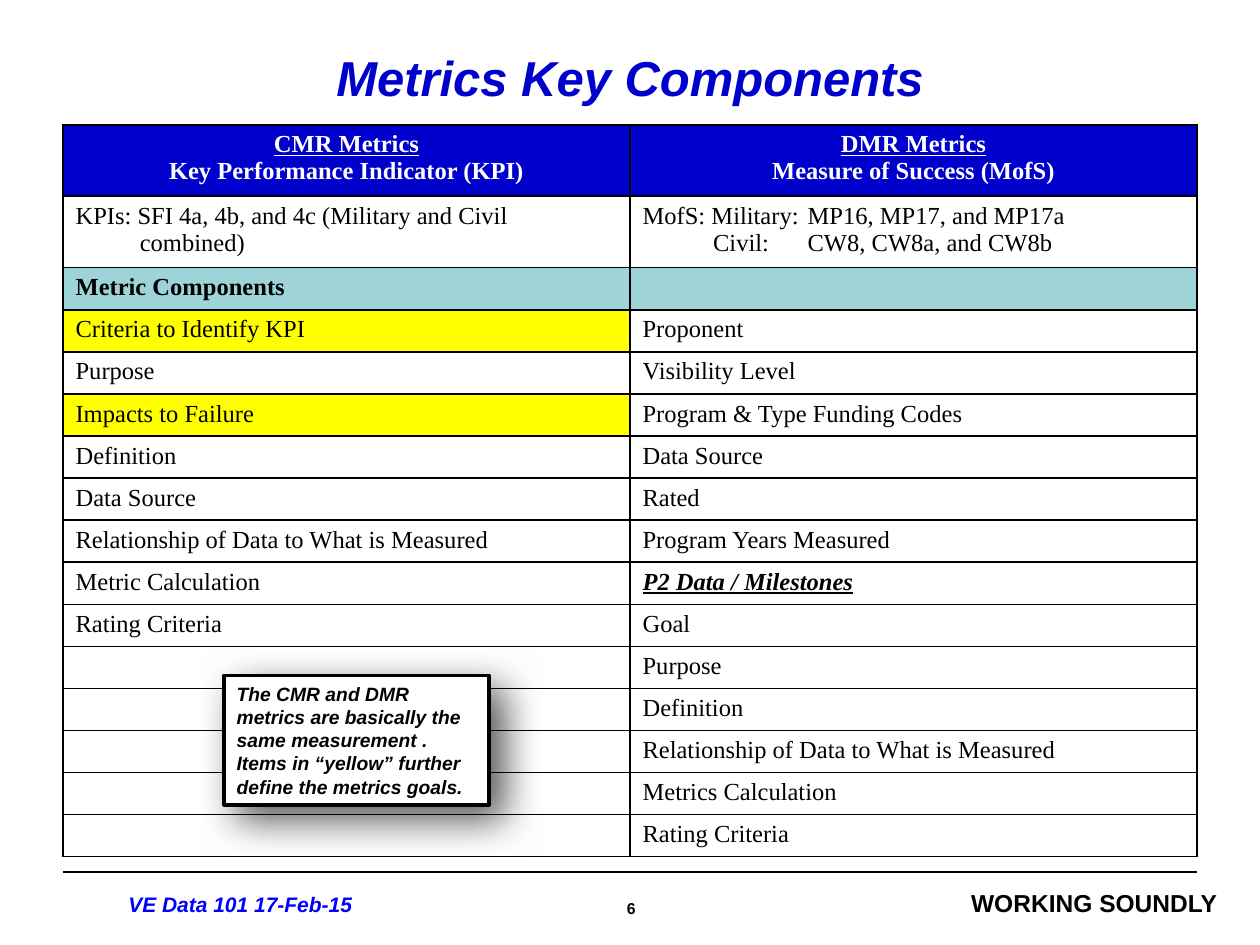
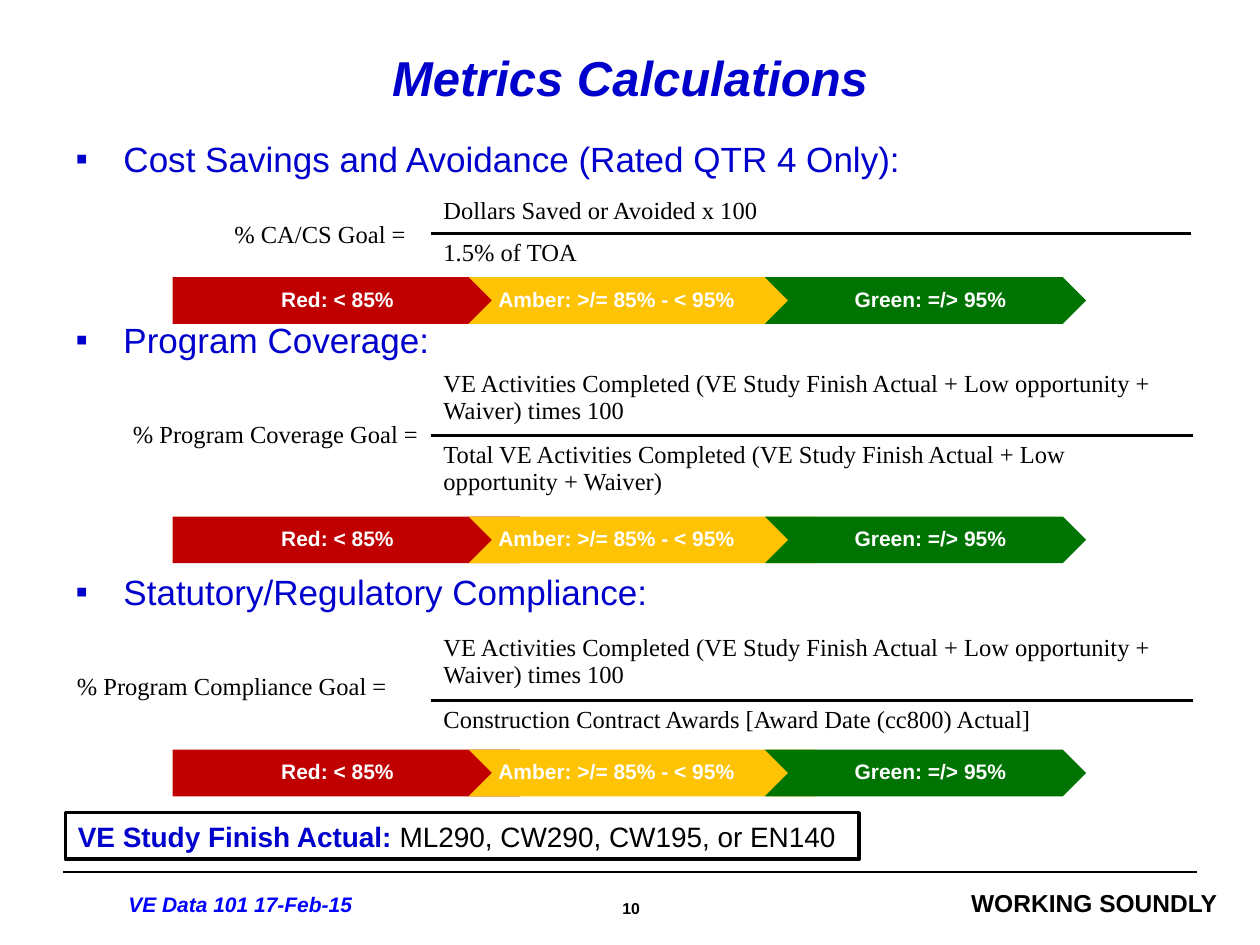
from dataclasses import dataclass

from lxml.etree import SubElement
from pptx import Presentation
from pptx.dml.color import RGBColor
from pptx.enum.shapes import MSO_CONNECTOR, MSO_SHAPE
from pptx.enum.text import MSO_ANCHOR, MSO_AUTO_SIZE, PP_ALIGN
from pptx.oxml.ns import qn
from pptx.util import Inches, Pt


@dataclass(frozen=True)
class Theme:
    black: RGBColor = RGBColor(0x00, 0x00, 0x00)
    white: RGBColor = RGBColor(0xFF, 0xFF, 0xFF)
    blue: RGBColor = RGBColor(0x00, 0x00, 0xCC)
    footer_blue: RGBColor = RGBColor(0x00, 0x00, 0xFF)
    teal: RGBColor = RGBColor(0x9E, 0xD3, 0xD7)
    yellow: RGBColor = RGBColor(0xFF, 0xFF, 0x00)
    red: RGBColor = RGBColor(0xC0, 0x00, 0x00)
    amber: RGBColor = RGBColor(0xFF, 0xC3, 0x05)
    green: RGBColor = RGBColor(0x00, 0x74, 0x03)
    sans: str = "Arial"
    serif: str = "Times New Roman"
    title_size: int = 28
    list_size: int = 20
    definition_size: int = 16
    table_size: int = 14
    motto_size: int = 14
    label_size: int = 12
    note_size: int = 11
    number_size: int = 9


NO_GRID_STYLE = "{2D5ABB26-0587-4C30-8999-92F81FD0307C}"
COMPONENT_ROW, NUMERATOR, DENOMINATOR = 0.31, 0.3, 0.36


class Deck:
    def __init__(self, theme):
        self.t = theme
        self.prs = Presentation()
        self.prs.slide_width, self.prs.slide_height = Inches(10), Inches(7.5)
        self.s = None

    def font(self, p, size, color, name=None, bold=False, italic=False, underline=False):
        for r in p.runs:
            f = r.font
            f.name, f.size, f.color.rgb = name or self.t.sans, Pt(size), color
            f.bold, f.italic, f.underline = bold, italic, underline

    def place(self, sp, x, y, w, h):
        sp.left, sp.top, sp.width, sp.height = Inches(x), Inches(y), Inches(w), Inches(h)

    def margins(self, tf, left, top, right, bottom):
        tf.margin_left, tf.margin_top = Inches(left), Inches(top)
        tf.margin_right, tf.margin_bottom = Inches(right), Inches(bottom)

    def indent(self, p, size):
        pPr = p._p.get_or_add_pPr()
        pPr.set("marL", str(Inches(size)))
        pPr.set("indent", str(-Inches(size)))
        return pPr

    def tabs(self, p, stops):
        tab_list = SubElement(p._p.get_or_add_pPr(), qn("a:tabLst"))
        for stop in stops:
            SubElement(tab_list, qn("a:tab"), pos=str(Inches(stop)), algn="l")

    def slide(self, title, number, layout):
        t = self.t
        self.s = self.prs.slides.add_slide(self.prs.slide_layouts[layout])
        sp = self.s.shapes.title
        self.place(sp, 0.5, 0.3, 9, 0.62)
        tf = sp.text_frame
        tf.text = title
        tf.auto_size, tf.vertical_anchor = MSO_AUTO_SIZE.NONE, MSO_ANCHOR.MIDDLE
        tf.paragraphs[0].alignment = PP_ALIGN.CENTER
        self.font(tf.paragraphs[0], t.title_size, t.blue, bold=True, italic=True)
        self.footer(number)

    def footer(self, number):
        t = self.t
        self.line(9.5, 6.92, 0.5, 6.92)
        self.text("WORKING SOUNDLY", 7.67, 7.05, 1.99, 0.24, t.motto_size,
                  t.black, PP_ALIGN.RIGHT, inset=False)
        self.text(str(number), 4.21, 7.08, 1.6, 0.25, t.number_size, t.black, PP_ALIGN.CENTER)
        self.text("VE Data 101 17-Feb-15", 0.92, 7.03, 2.2, 0.3, t.label_size,
                  t.footer_blue, italic=True)

    def line(self, x1, y1, x2, y2):
        c = self.s.shapes.add_connector(
            MSO_CONNECTOR.STRAIGHT, Inches(x1), Inches(y1), Inches(x2), Inches(y2))
        c.line.color.rgb, c.line.width = self.t.black, Pt(0.75)
        SubElement(c.element.spPr, qn("a:effectLst"))

    def text(self, text, x, y, w, h, size, color, align=PP_ALIGN.LEFT, italic=False, inset=True):
        sp = self.s.shapes.add_textbox(Inches(x), Inches(y), Inches(w), Inches(h))
        tf = sp.text_frame
        tf.text, tf.word_wrap = text, True
        if not inset:
            self.margins(tf, 0, 0, 0, 0)
        p = tf.paragraphs[0]
        p.alignment = align
        self.font(p, size, color, bold=True, italic=italic)

    def shape(self, kind, x, y, w, h, fill):
        sp = self.s.shapes.add_shape(kind, Inches(x), Inches(y), Inches(w), Inches(h))
        sp.shadow.inherit = False
        sp.fill.solid()
        sp.fill.fore_color.rgb = fill
        sp.line.fill.background()
        sp.text_frame.word_wrap = True
        return sp

    def box(self, text, x, y, w, h):
        sp = self.shape(MSO_SHAPE.RECTANGLE, x, y, w, h, self.t.white)
        sp.line.color.rgb, sp.line.width = self.t.black, Pt(2)
        sp.text_frame.text = text
        p = sp.text_frame.paragraphs[0]
        p.alignment = PP_ALIGN.LEFT
        return sp, p

    def note(self, text, x, y, w, h):
        sp, p = self.box(text, x, y, w, h)
        self.font(p, self.t.note_size, self.t.black, bold=True, italic=True)
        effects = sp.element.spPr.find(qn("a:effectLst"))
        shadow = SubElement(effects, qn("a:outerShdw"), blurRad=str(Pt(23)), dist=str(Pt(11)),
                            dir="2700000", algn="tl", rotWithShape="0")
        color = SubElement(shadow, qn("a:srgbClr"), val=str(self.t.black))
        SubElement(color, qn("a:alpha"), val="65000")

    def definition(self, term, meaning, x, y, w, h):
        _, p = self.box(term, x, y, w, h)
        self.font(p, self.t.definition_size, self.t.blue, bold=True)
        r = p.add_run()
        r.text = meaning
        r.font.name, r.font.size = self.t.sans, Pt(self.t.definition_size)
        r.font.color.rgb, r.font.bold = self.t.black, False

    def bullets(self, items, x, y, w, h):
        sp = self.s.placeholders[1]
        self.place(sp, x, y, w, h)
        tf = sp.text_frame
        tf.text = "\n".join(text for text, _ in items)
        tf.auto_size = MSO_AUTO_SIZE.NONE
        for p, (_, gap) in zip(tf.paragraphs, items):
            pPr = self.indent(p, 0.38)
            SubElement(pPr, qn("a:buFont"), typeface=self.t.sans)
            SubElement(pPr, qn("a:buChar"), char="▪")
            p.space_before = Pt(gap)
            self.font(p, self.t.list_size, self.t.blue)

    def table(self, x, y, widths, heights, total_height):
        frame = self.s.shapes.add_table(
            len(heights), len(widths), Inches(x), Inches(y),
            Inches(sum(widths)), Inches(total_height))
        frame.element.find(".//" + qn("a:tableStyleId")).text = NO_GRID_STYLE
        table = frame.table
        table.first_row = table.horz_banding = False
        for column, width in zip(table.columns, widths):
            column.width = Inches(width)
        for row, height in zip(table.rows, heights):
            row.height = Inches(height)
        frame.height = Inches(total_height)
        return table

    def cell(self, cell, text, fill=None, edges="", width=1, color=None,
             align=PP_ALIGN.LEFT, **style):
        t = self.t
        tcPr = cell._tc.get_or_add_tcPr()
        for edge in edges:
            ln = SubElement(tcPr, qn("a:ln" + edge), w=str(Pt(width)))
            SubElement(SubElement(ln, qn("a:solidFill")), qn("a:srgbClr"), val=str(t.black))
        if fill is None:
            cell.fill.background()
        else:
            cell.fill.solid()
            cell.fill.fore_color.rgb = fill
        cell.text_frame.text = text
        for p in cell.text_frame.paragraphs:
            p.alignment = align
            self.font(p, t.table_size, color or t.black, t.serif, **style)
            if not p.runs:
                SubElement(p._p, qn("a:endParaRPr"), sz=str(t.table_size * 100))

    def fraction(self, goal, top, bottom, x, y, widths, height, align=PP_ALIGN.LEFT):
        table = self.table(x, y, widths, (NUMERATOR, DENOMINATOR), height)
        label = table.cell(0, 0)
        label.merge(table.cell(1, 0))
        self.cell(label, goal, align=align)
        label.vertical_anchor = MSO_ANCHOR.MIDDLE
        self.cell(table.cell(1, 0), "")
        self.cell(table.cell(0, 1), top, edges="B", width=2.25)
        self.cell(table.cell(1, 1), bottom, edges="T", width=2.25)

    def rating_band(self, y):
        t = self.t
        steps = (
            ("Red: < 85%", MSO_SHAPE.PENTAGON, 2.94, t.red, PP_ALIGN.CENTER, 0.07, 0.3),
            ("Amber: >/= 85% - < 95%", MSO_SHAPE.CHEVRON, 2.94, t.amber, PP_ALIGN.LEFT, 0.05, 0.02),
            ("Green: =/> 95%", MSO_SHAPE.CHEVRON, 2.55, t.green, PP_ALIGN.CENTER, 0.1, 0.02),
        )
        for i, (text, kind, width, fill, align, left, right) in enumerate(steps):
            sp = self.shape(kind, 1.37 + 2.35 * i, y, width, 0.37, fill)
            tf = sp.text_frame
            tf.text, tf.vertical_anchor = text, MSO_ANCHOR.MIDDLE
            self.margins(tf, left, 0.04, right, 0.04)
            p = tf.paragraphs[0]
            p.alignment, p.line_spacing = align, 0.9
            self.font(p, t.label_size, t.white, bold=True)


def components_slide(deck):
    t = deck.t
    deck.slide("Metrics Key Components", 6, 5)
    rows = (
        ("CMR Metrics\nKey Performance Indicator (KPI)", "DMR Metrics\nMeasure of Success (MofS)"),
        ("KPIs: SFI 4a, 4b, and 4c (Military and Civil combined)",
         "MofS: Military:\tMP16, MP17, and MP17a\n\tCivil:\tCW8, CW8a, and CW8b"),
        ("Metric Components", ""),
        ("Criteria to Identify KPI", "Proponent"),
        ("Purpose", "Visibility Level"),
        ("Impacts to Failure", "Program & Type Funding Codes"),
        ("Definition", "Data Source"),
        ("Data Source", "Rated"),
        ("Relationship of Data to What is Measured", "Program Years Measured"),
        ("Metric Calculation", "P2 Data / Milestones"),
        ("Rating Criteria", "Goal"),
        ("", "Purpose"),
        ("", "Definition"),
        ("", "Relationship of Data to What is Measured"),
        ("", "Metrics Calculation"),
        ("", "Rating Criteria"),
    )
    table = deck.table(0.5, 0.99, (4.5, 4.5), [COMPONENT_ROW] * len(rows), 5.8)
    highlighted = ("Criteria to Identify KPI", "Impacts to Failure")
    for i, row in enumerate(rows):
        for j, text in enumerate(row):
            style = {"fill": t.yellow if text in highlighted else t.white}
            if i == 0:
                style = {"fill": t.blue, "color": t.white, "bold": True, "align": PP_ALIGN.CENTER}
            elif i == 2:
                style = {"fill": t.teal, "bold": True}
            elif text == "P2 Data / Milestones":
                style.update(bold=True, italic=True, underline=True)
            deck.cell(table.cell(i, j), text, edges="LRTB", **style)
    for j in range(2):
        table.cell(0, j).text_frame.paragraphs[0].runs[0].font.underline = True
    deck.indent(table.cell(1, 0).text_frame.paragraphs[0], 0.51)
    military, civil = table.cell(1, 1).text_frame.paragraphs
    deck.tabs(military, (1.31,))
    deck.tabs(civil, (0.56, 1.31))
    deck.note("The CMR and DMR metrics are basically the same measurement . "
              "Items in “yellow” further define the metrics goals.", 1.78, 5.36, 2.1, 1.03)


def calculations_slide(deck):
    deck.slide("Metrics Calculations", 10, 1)
    deck.bullets((("Cost Savings and Avoidance (Rated QTR 4 Only):", 0),
                  ("Program Coverage:", 79.5),
                  ("Statutory/Regulatory Compliance:", 120)), 0.5, 1.04, 9, 5.82)
    activities = "VE Activities Completed (VE Study Finish Actual + Low opportunity + Waiver)"
    completed = activities + " times 100"
    wide = (2.91, 6.05)
    deck.fraction("% CA/CS Goal =", "Dollars Saved or Avoided x 100", "1.5% of TOA",
                  1.76, 1.52, (1.66, 6.03), 0.69)
    deck.fraction("% Program Coverage Goal =", completed, "Total " + activities,
                  0.51, 2.89, wide, 1.13, PP_ALIGN.RIGHT)
    deck.fraction("% Program Compliance Goal =", completed,
                  "Construction Contract Awards [Award Date (cc800) Actual]",
                  0.51, 4.99, wide, 0.92)
    for y in (2.2, 4.1, 5.95):
        deck.rating_band(y)
    deck.definition("VE Study Finish Actual: ", "ML290, CW290, CW195, or EN140",
                    0.52, 6.45, 6.3, 0.37)


def main():
    deck = Deck(Theme())
    components_slide(deck)
    calculations_slide(deck)
    deck.prs.save("out.pptx")


if __name__ == "__main__":
    main()
